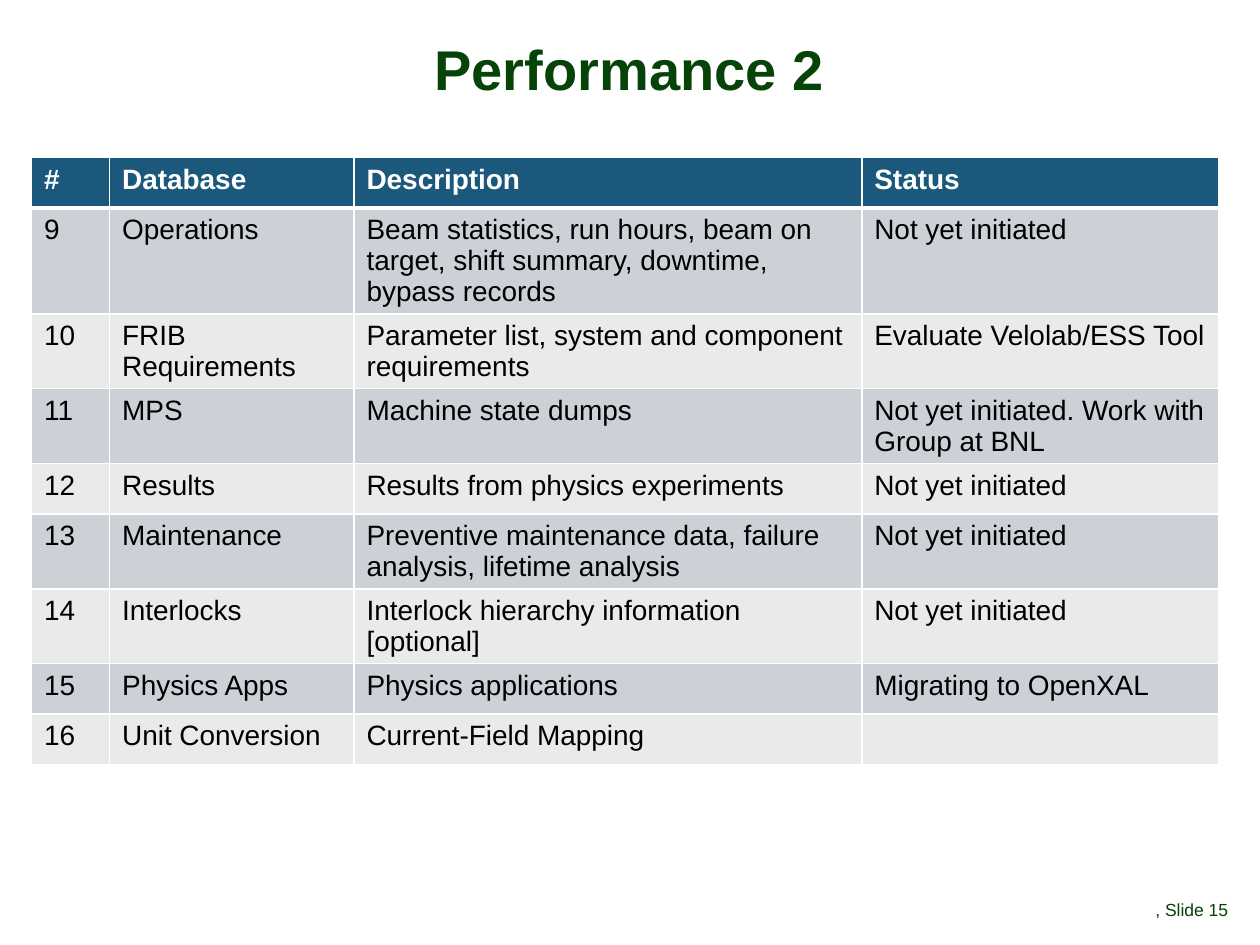
from dataclasses import dataclass

from lxml import etree
from pptx import Presentation
from pptx import util as u
from pptx.dml.color import RGBColor
from pptx.enum import text
from pptx.oxml.ns import qn


@dataclass(frozen=True)
class Theme:
    font: str = "Arial"
    green: str = "064308"
    header: str = "1B587C"
    bands: tuple = ("CDD1D7", "E8EAEC")
    white: str = "FFFFFF"
    black: str = "000000"
    title_size: int = 32
    table_size: int = 16
    footer_size: int = 10
    grid_width: int = 1
    header_rule_width: int = 3


HEADINGS = ("#", "Database", "Description", "Status")
DATABASES = (
    ("9", "Operations",
     "Beam statistics, run hours, beam on target, shift summary, downtime, bypass records",
     "Not yet initiated"),
    ("10", "FRIB Requirements", "Parameter list, system and component requirements",
     "Evaluate Velolab/ESS Tool"),
    ("11", "MPS", "Machine state dumps", "Not yet initiated. Work with Group at BNL"),
    ("12", "Results", "Results from physics experiments", "Not yet initiated"),
    ("13", "Maintenance", "Preventive maintenance data, failure analysis, lifetime analysis",
     "Not yet initiated"),
    ("14", "Interlocks", "Interlock hierarchy information [optional]", "Not yet initiated"),
    ("15", "Physics Apps", "Physics applications", "Migrating to OpenXAL"),
    ("16", "Unit Conversion", "Current-Field Mapping", ""),
)


def write(frame, words, *, font, size, color, bold=False, align=None, spacing=None):
    """Put one formatted paragraph into a text frame."""
    paragraph = frame.paragraphs[0]
    paragraph.alignment = align
    paragraph.line_spacing = spacing
    paragraph.font.size = u.Pt(size)
    if not words:
        return
    run = paragraph.add_run()
    run.text = words
    run.font.name = font
    run.font.size = u.Pt(size)
    run.font.bold = bold
    run.font.color.rgb = RGBColor.from_string(color)


def add_border(cell, side, color, width):
    line = etree.SubElement(cell._tc.get_or_add_tcPr(), qn(f"a:ln{side}"),
                            w=str(u.Pt(width)))
    fill = etree.SubElement(line, qn("a:solidFill"))
    etree.SubElement(fill, qn("a:srgbClr"), val=color)


class SlideBuilder:
    def __init__(self, slide, theme):
        self.slide = slide
        self.theme = theme

    def text_box(self, words, place, insets, anchor, **style):
        box = self.slide.shapes.add_textbox(*map(u.Inches, place))
        frame = box.text_frame
        frame.word_wrap = True
        frame.vertical_anchor = anchor
        frame.margin_left = frame.margin_right = u.Inches(insets[0])
        frame.margin_top = frame.margin_bottom = u.Inches(insets[1])
        write(frame, words, font=self.theme.font, color=self.theme.green, **style)

    def table(self, rows, left, top, widths, row_height):
        table = self.slide.shapes.add_table(
            len(rows), len(widths), u.Inches(left), u.Inches(top),
            u.Inches(sum(widths)), u.Inches(row_height * len(rows))).table
        for column, width in zip(table.columns, widths):
            column.width = u.Inches(width)
        for row_index, row in enumerate(rows):
            for column_index, words in enumerate(row):
                self.cell(table.cell(row_index, column_index), words, row_index)

    def cell(self, cell, words, row_index):
        theme = self.theme
        is_header = row_index == 0
        # The rule under the header is shared with the first body row
        heavy_side = {0: "B", 1: "T"}.get(row_index)
        for side in "LRTB":
            width = theme.header_rule_width if side == heavy_side else theme.grid_width
            add_border(cell, side, theme.white, width)
        fill = theme.header if is_header else theme.bands[(row_index - 1) % 2]
        cell.fill.solid()
        cell.fill.fore_color.rgb = RGBColor.from_string(fill)
        write(cell.text_frame, words, font=theme.font, size=theme.table_size,
              color=theme.white if is_header else theme.black, bold=is_header)


def main():
    presentation = Presentation()
    presentation.slide_width = u.Inches(10)
    presentation.slide_height = u.Inches(7.5)
    theme = Theme()
    builder = SlideBuilder(
        presentation.slides.add_slide(presentation.slide_layouts[6]), theme)

    # Database status table
    builder.table((HEADINGS, *DATABASES), 0.25, 1.25,
                  widths=(0.62, 1.94, 4.03, 2.83), row_height=0.4)

    # Title
    builder.text_box("Performance 2", (0.08, 0.31, 9.83, 0.53), (0.06, 0.02),
                     text.MSO_ANCHOR.MIDDLE, size=theme.title_size, bold=True,
                     align=text.PP_ALIGN.CENTER, spacing=0.88)

    # Slide number
    builder.text_box(", Slide 15", (9.17, 6.95, 0.83, 0.4), (0, 0.05),
                     text.MSO_ANCHOR.BOTTOM, size=theme.footer_size, spacing=0.9)

    presentation.save("out.pptx")


if __name__ == "__main__":
    main()
